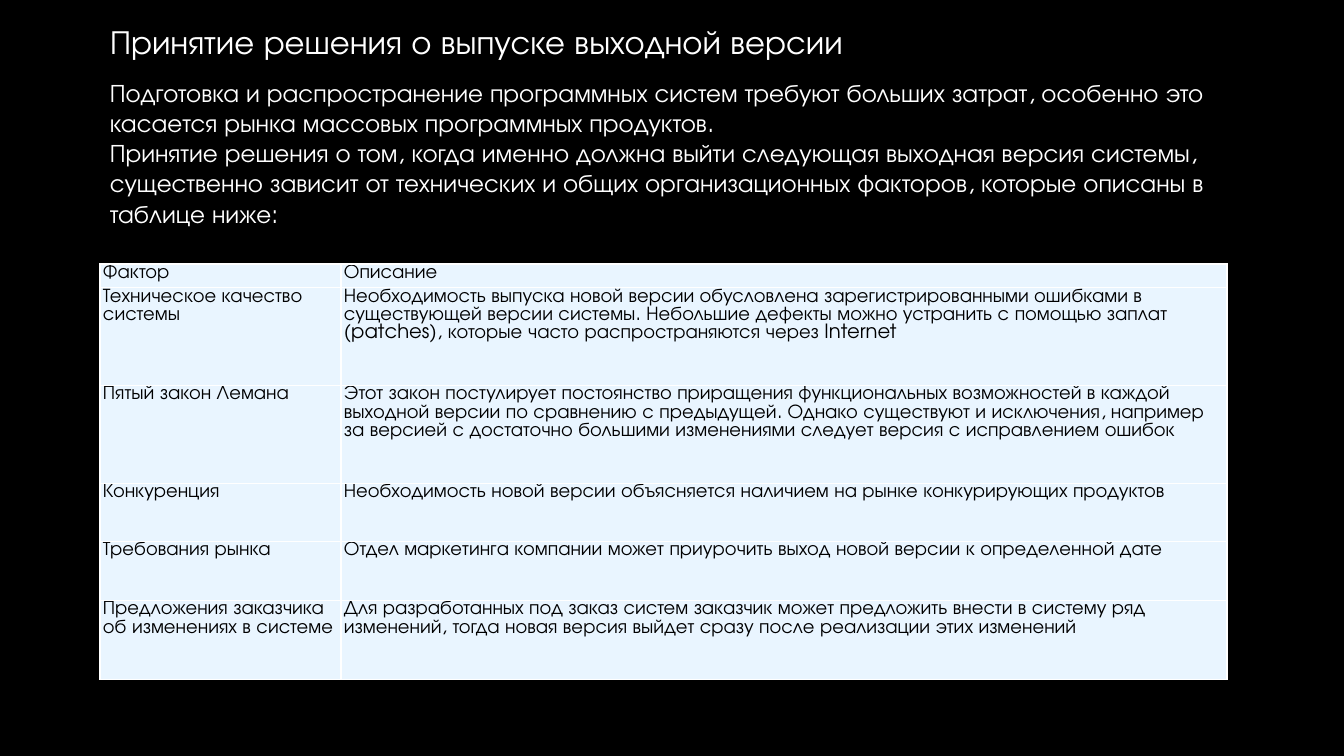
"""Build a slide on deciding when to release an output version of a system."""
from pptx import Presentation
from pptx.dml.color import RGBColor
from pptx.enum.text import MSO_ANCHOR, MSO_AUTO_SIZE, PP_ALIGN
from pptx.util import Emu, Pt

THEME = {
    "font": "TeX Gyre Adventor",
    "background": "000000", "light": "FFFFFF", "dark": "000000", "cell": "E9F5FF",
    "title": 24, "body": 18, "table": 14,
}
EMU_PER_PX = 12192000 / 1344


def px(length):
    return Emu(round(length * EMU_PER_PX))


def add_text(paragraph, text, size, color, spacing=1.0):
    paragraph.alignment = PP_ALIGN.LEFT
    paragraph.line_spacing = spacing
    run = paragraph.add_run()
    run.text = text
    run.font.name = THEME["font"]
    run.font.size = Pt(THEME[size])
    run.font.color.rgb = RGBColor.from_string(THEME[color])


prs = Presentation()
prs.slide_width, prs.slide_height = px(1344), px(756)
slide = prs.slides.add_slide(prs.slide_layouts[5])
slide.background.fill.solid()
slide.background.fill.fore_color.rgb = RGBColor.from_string(THEME["background"])

heading = slide.shapes.title
heading.left, heading.top, heading.width, heading.height = px(100), px(20), px(1127), px(51)
heading.text_frame.vertical_anchor = MSO_ANCHOR.TOP
heading.text_frame.auto_size = MSO_AUTO_SIZE.NONE
add_text(heading.text_frame.paragraphs[0],
         "Принятие решения о выпуске выходной версии", "title", "light", 0.9)

intro = slide.shapes.add_textbox(px(100), px(72), px(1131), px(194)).text_frame
intro.word_wrap = True
intro_texts = [
    "Подготовка и распространение программных систем требуют больших затрат, "
    "особенно это касается рынка массовых программных продуктов.",
    "Принятие решения о том, когда именно должна выйти следующая выходная версия системы, "
    "существенно зависит от технических и общих организационных факторов, "
    "которые описаны в таблице ниже:",
]
for index, text in enumerate(intro_texts):
    paragraph = intro.add_paragraph() if index else intro.paragraphs[0]
    add_text(paragraph, text, "body", "light")

factors = [
    (23, "Фактор", "Описание"),
    (98, "Техническое качество системы",
     "Необходимость выпуска новой версии обусловлена зарегистрированными ошибками "
     "в существующей версии системы. Небольшие дефекты можно устранить с помощью заплат "
     "(patches), которые часто распространяются через Internet"),
    (98, "Пятый закон Лемана",
     "Этот закон постулирует постоянство приращения функциональных возможностей "
     "в каждой выходной версии по сравнению с предыдущей. Однако существуют и исключения, "
     "например за версией с достаточно большими изменениями следует версия "
     "с исправлением ошибок"),
    (58, "Конкуренция",
     "Необходимость новой версии объясняется наличием на рынке конкурирующих продуктов"),
    (59, "Требования рынка",
     "Отдел маркетинга компании может приурочить выход новой версии к определенной дате"),
    (79, "Предложения заказчика об изменениях в системе",
     "Для разработанных под заказ систем заказчик может предложить внести в систему ряд "
     "изменений, тогда новая версия выйдет сразу после реализации этих изменений"),
]
column_widths = [241, 886]
table = slide.shapes.add_table(
    len(factors), len(column_widths), px(100), px(264),
    px(sum(column_widths)), px(sum(height for height, *_ in factors))).table
table.first_row = table.horz_banding = False
for column, width in zip(table.columns, column_widths):
    column.width = px(width)

for row, (height, *texts) in zip(table.rows, factors):
    row.height = px(height)
    for cell, text in zip(row.cells, texts):
        cell.margin_left = cell.margin_right = px(3)
        cell.margin_top = cell.margin_bottom = 0
        add_text(cell.text_frame.paragraphs[0], text, "table", "dark")
        cell.fill.solid()
        cell.fill.fore_color.rgb = RGBColor.from_string(THEME["cell"])

prs.save("out.pptx")
